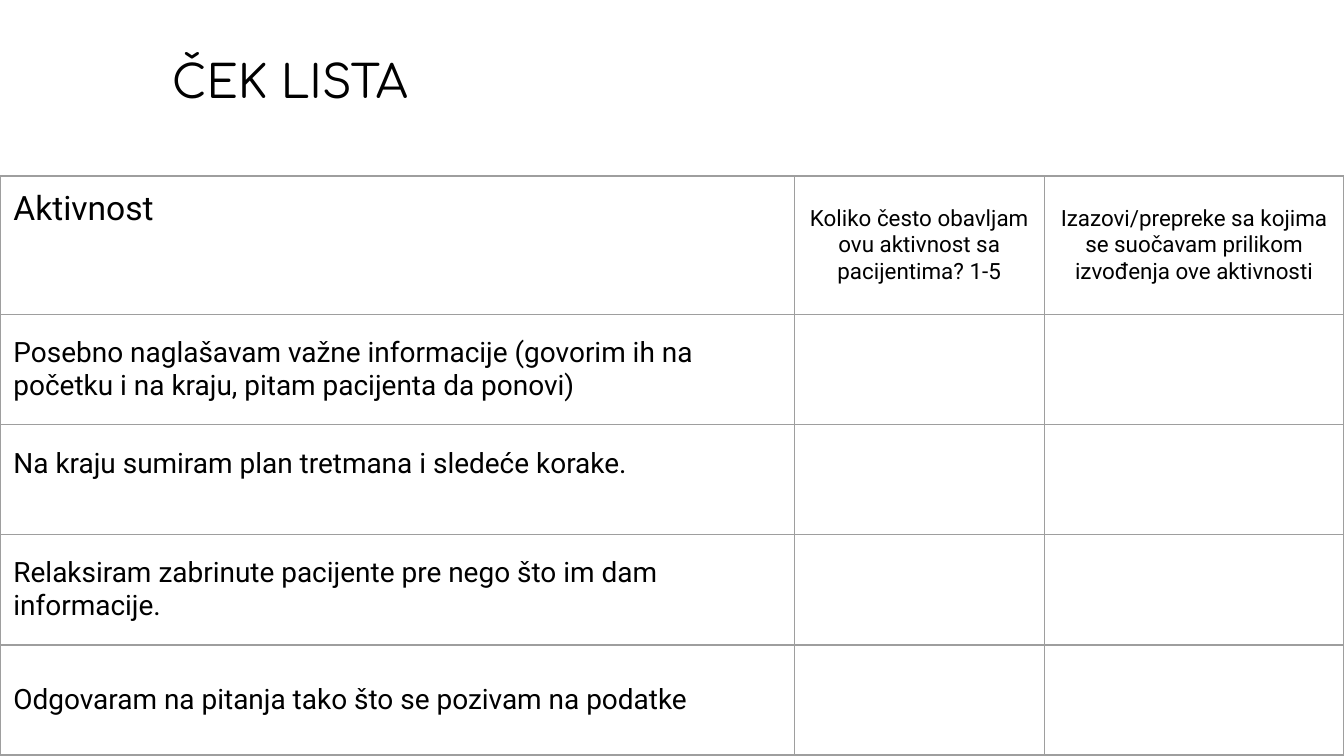
from dataclasses import dataclass

from lxml.etree import SubElement
from pptx import Presentation
from pptx.dml.color import RGBColor
from pptx.enum.text import MSO_ANCHOR, PP_ALIGN
from pptx.oxml.ns import qn
from pptx.slide import Slide
from pptx.table import _Cell
from pptx.text.text import _Paragraph
from pptx.util import Inches, Pt


@dataclass(frozen=True)
class Theme:
    title_font: str = "Comfortaa"
    body_font: str = "Roboto"
    text: str = "000000"
    fill: str = "FFFFFF"
    border: str = "9E9E9E"
    border_pt: float = 0.75
    title_pt: float = 24.2
    heading_pt: float = 18
    question_pt: float = 12
    activity_pt: float = 15
    inset: float = 0.1


@dataclass(frozen=True)
class CellText:
    text: str = ""
    size: float = 12
    align: PP_ALIGN = PP_ALIGN.LEFT
    anchor: MSO_ANCHOR = MSO_ANCHOR.MIDDLE
    bottom: float = 0.1


THEME = Theme()
COLUMNS = (5.91, 1.86, 2.23)
ROW_HEIGHTS = (1.03,) + (0.82,) * 4


def question(text: str) -> CellText:
    return CellText(text, THEME.question_pt, PP_ALIGN.CENTER)


def activity(text: str, bottom: float = THEME.inset) -> tuple[CellText, ...]:
    return (CellText(text, THEME.activity_pt, bottom=bottom), CellText(), CellText())


ROWS = (
    (
        CellText("Aktivnost", THEME.heading_pt, anchor=MSO_ANCHOR.TOP),
        question("Koliko često obavljam ovu aktivnost sa pacijentima? 1-5"),
        question("Izazovi/prepreke sa kojima se suočavam prilikom izvođenja ove aktivnosti"),
    ),
    activity("Posebno naglašavam važne informacije (govorim ih na početku i na kraju, "
             "pitam pacijenta da ponovi)"),
    activity("Na kraju sumiram plan tretmana i sledeće korake.", bottom=0.34),
    activity("Relaksiram zabrinute pacijente pre nego što im dam informacije."),
    activity("Odgovaram na pitanja tako što se pozivam na podatke"),
)


def add_run(p: _Paragraph, text: str, font: str, size: float) -> None:
    r = p.add_run()
    r.text = text
    r.font.name = font
    r.font.size = Pt(size)
    r.font.color.rgb = RGBColor.from_string(THEME.text)


def add_title(s: Slide, text: str) -> None:
    tf = s.shapes.add_textbox(Inches(1.18), Inches(0.3), Inches(8.48), Inches(0.74)).text_frame
    tf.word_wrap = True
    tf.margin_left = tf.margin_right = tf.margin_top = tf.margin_bottom = Inches(THEME.inset)
    add_run(tf.paragraphs[0], text, THEME.title_font, THEME.title_pt)


def add_borders(cell: _Cell) -> None:
    tc_pr = cell._tc.get_or_add_tcPr()
    for i, side in enumerate(("lnL", "lnR", "lnT", "lnB")):
        ln = SubElement(tc_pr, qn(f"a:{side}"), w=str(Pt(THEME.border_pt)))
        SubElement(SubElement(ln, qn("a:solidFill")), qn("a:srgbClr"), val=THEME.border)
        tc_pr.insert(i, ln)  # borders come before the fill


def fill_cell(cell: _Cell, item: CellText) -> None:
    cell.fill.solid()
    cell.fill.fore_color.rgb = RGBColor.from_string(THEME.fill)
    add_borders(cell)
    cell.margin_left = cell.margin_right = cell.margin_top = Inches(THEME.inset)
    cell.margin_bottom = Inches(item.bottom)
    cell.vertical_anchor = item.anchor
    p = cell.text_frame.paragraphs[0]
    p.alignment = item.align
    if item.text:
        add_run(p, item.text, THEME.body_font, item.size)


def add_checklist(s: Slide) -> None:
    table = s.shapes.add_table(len(ROWS), len(COLUMNS), Inches(0), Inches(1.31),
                               Inches(sum(COLUMNS)), Inches(sum(ROW_HEIGHTS))).table
    table.first_row = table.horz_banding = False
    for column, width in zip(table.columns, COLUMNS):
        column.width = Inches(width)
    for row, height, items in zip(table.rows, ROW_HEIGHTS, ROWS):
        row.height = Inches(height)
        for cell, item in zip(row.cells, items):
            fill_cell(cell, item)


def main() -> None:
    prs = Presentation()
    # Widescreen, 16:9
    prs.slide_width = Inches(10)
    prs.slide_height = Inches(10 * 9 / 16)
    s = prs.slides.add_slide(prs.slide_layouts[6])

    # Heading above the checklist
    add_title(s, "ČEK LISTA")

    # Activities with empty answer columns
    add_checklist(s)

    prs.save("out.pptx")


if __name__ == "__main__":
    main()
